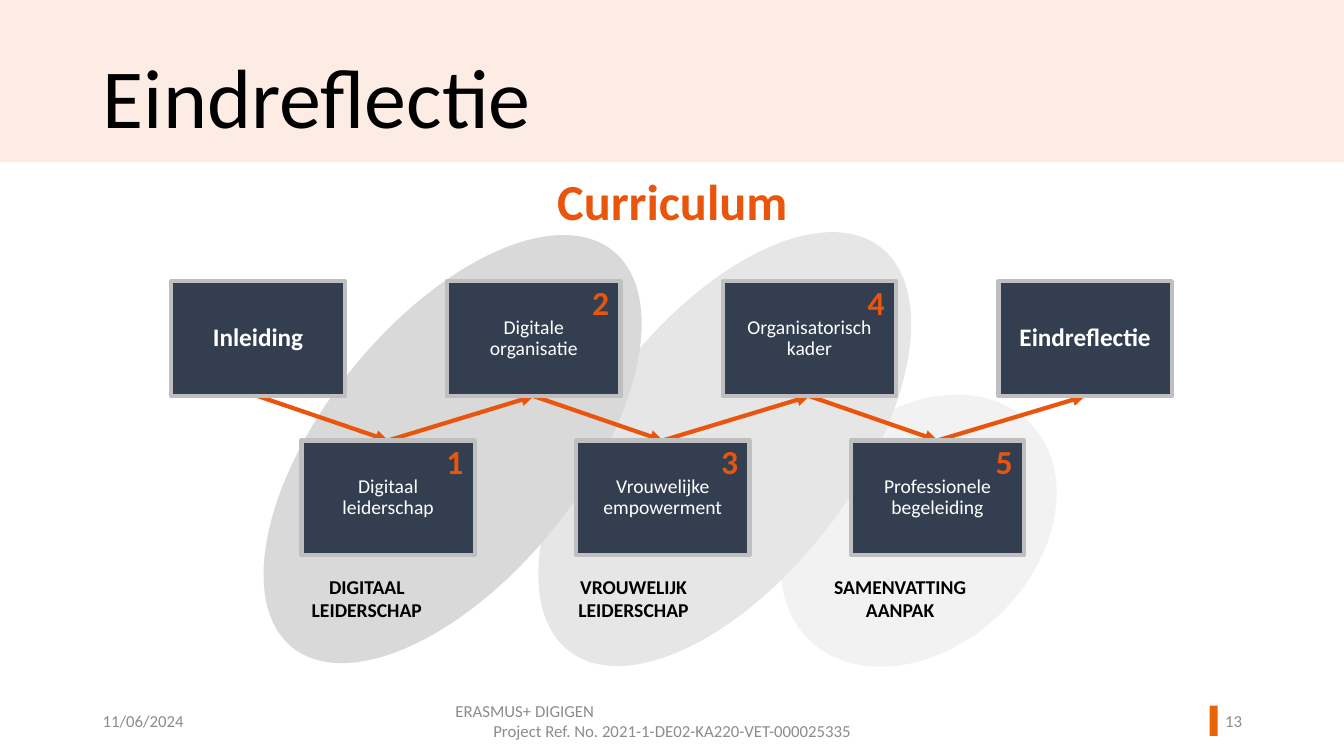
from dataclasses import dataclass

from lxml import etree
from pptx import Presentation
from pptx.dml.color import RGBColor
from pptx.enum.shapes import MSO_CONNECTOR, MSO_SHAPE
from pptx.enum.text import MSO_ANCHOR, PP_ALIGN
from pptx.oxml.ns import qn
from pptx.util import Inches, Pt

RECTANGLE, OVAL = MSO_SHAPE.RECTANGLE, MSO_SHAPE.OVAL
STRAIGHT = MSO_CONNECTOR.STRAIGHT
TOP, MIDDLE = MSO_ANCHOR.TOP, MSO_ANCHOR.MIDDLE
LEFT, CENTER, RIGHT = PP_ALIGN.LEFT, PP_ALIGN.CENTER, PP_ALIGN.RIGHT

CELL = 0.1  # grid cell in inches
COLUMNS, ROWS = 133.33, 75
CARD_WIDTH, CARD_HEIGHT = 17.2, 11.4
UPPER_ROW, LOWER_ROW = 27.9, 43.7


@dataclass(frozen=True)
class Theme:
    font: str = "Calibri"
    band: str = "FDECE3"
    marker: str = "E86507"
    accent: str = "E9550D"
    card: str = "333F50"
    card_border: str = "BFBFBF"
    ink: str = "000000"
    light: str = "FFFFFF"
    muted: str = "8C8C8C"
    title_size: int = 60
    heading_size: int = 36
    number_size: int = 24
    endpoint_size: int = 18
    body_size: int = 14
    footer_size: int = 12
    line_width: int = 3


THEME = Theme()


def grid(*cells):
    """Convert grid cells to slide lengths."""
    return [Inches(cell * CELL) for cell in cells]


def write(frame, text, *, size, color, bold=False, align=LEFT, anchor=TOP,
          spacing=None, margin=None):
    """Fill a text frame, one paragraph per line; align may list one value per line."""
    frame.word_wrap = True
    frame.vertical_anchor = anchor
    if margin is not None:
        frame.margin_left = frame.margin_right = Inches(margin)
        frame.margin_top = frame.margin_bottom = Inches(margin)
    lines = text.split("\n")
    aligns = align if isinstance(align, list) else [align] * len(lines)
    for index, (line, line_align) in enumerate(zip(lines, aligns)):
        para = frame.add_paragraph() if index else frame.paragraphs[0]
        para.alignment = line_align
        if spacing:
            para.line_spacing = spacing
        span = para.add_run()
        span.text = line
        span.font.name = THEME.font
        span.font.size = Pt(size)
        span.font.bold = bold
        span.font.color.rgb = RGBColor.from_string(color)


class Page:
    def __init__(self, deck, theme):
        self.theme = theme
        self.slide = deck.slides.add_slide(deck.slide_layouts[5])
        self.shapes = self.slide.shapes

    def title(self, text, *cells):
        box = self.shapes.title
        box.left, box.top, box.width, box.height = grid(*cells)
        write(box.text_frame, text, size=self.theme.title_size,
              color=self.theme.ink, spacing=0.9)

    def shape(self, kind, *cells, fill, border=None, rotation=0):
        shape = self.shapes.add_shape(kind, *grid(*cells))
        shape.shadow.inherit = False
        shape.rotation = rotation
        shape.fill.solid()
        shape.fill.fore_color.rgb = RGBColor.from_string(fill)
        if border:
            shape.line.color.rgb = RGBColor.from_string(border)
            shape.line.width = Pt(self.theme.line_width)
        else:
            shape.line.fill.background()
        return shape

    def band(self, height):
        """Draw the header band behind the title."""
        band = self.shape(RECTANGLE, 0, 0, COLUMNS, height, fill=self.theme.band)
        self.shapes.title._element.addprevious(band._element)

    def text(self, text, *cells, **style):
        box = self.shapes.add_textbox(*grid(*cells))
        write(box.text_frame, text, **style)

    def footer(self, text, left, width, align):
        self.text(text, left, 69.5, width, 4, size=self.theme.footer_size,
                  color=self.theme.muted, align=align, anchor=MIDDLE)

    def arrow(self, start, end):
        arrow = self.shapes.add_connector(STRAIGHT, *grid(*start, *end))
        arrow.line.color.rgb = RGBColor.from_string(self.theme.accent)
        arrow.line.width = Pt(self.theme.line_width)
        etree.SubElement(arrow.line._get_or_add_ln(), qn("a:tailEnd"), type="triangle")
        etree.SubElement(arrow._element.spPr, qn("a:effectLst"))

    def card(self, text, left, top, number=None):
        theme = self.theme
        card = self.shape(RECTANGLE, left, top, CARD_WIDTH, CARD_HEIGHT,
                          fill=theme.card, border=theme.card_border)
        size = theme.body_size if number else theme.endpoint_size
        write(card.text_frame, text, size=size, color=theme.light,
              bold=number is None, align=CENTER, anchor=MIDDLE,
              spacing=0.9, margin=0.16)
        if number:
            self.text(str(number), left + 13.4, top - 0.4, 3.7, 5, bold=True,
                      size=theme.number_size, color=theme.accent)


def draw_curriculum(page):
    theme = page.theme
    ellipses = [
        ((75.8, 41.1, 30.7, 23.1), 316.4, "F2F2F2"),
        ((46.6, 31.7, 50.6, 25.7), 307.6, "E7E6E6"),
        ((19.6, 31.8, 50.6, 25.5), 309, "D9D9D9"),
    ]
    for cells, rotation, fill in ellipses:
        page.shape(OVAL, *cells, fill=fill, rotation=rotation)

    modules = ["Inleiding", "Digitaal leiderschap", "Digitale organisatie",
               "Vrouwelijke empowerment", "Organisatorisch kader",
               "Professionele begeleiding", "Eindreflectie"]
    places, joints = [], []
    for index in range(len(modules)):
        step, is_lower = divmod(index, 2)
        left = 29.9 + 27.25 * step if is_lower else 17 + 27.35 * step
        top = LOWER_ROW if is_lower else UPPER_ROW
        places.append((left, top))
        joint_row = top if is_lower else top + CARD_HEIGHT
        joints.append((left + CARD_WIDTH / 2, joint_row))
    for start, end in zip(joints, joints[1:]):
        page.arrow(start, end)
    last = len(modules) - 1
    for index, (module, place) in enumerate(zip(modules, places)):
        page.card(module, *place, number=index if 0 < index < last else None)

    captions = ["DIGITAAL LEIDERSCHAP", "VROUWELIJK LEIDERSCHAP", "SAMENVATTING\nAANPAK"]
    for index, caption in enumerate(captions):
        page.text(caption, 27.8 + 26.45 * index, 56.5, CARD_WIDTH, 5.7, bold=True,
                  size=theme.body_size, color=theme.ink, align=CENTER)


def main():
    deck = Presentation()
    deck.slide_width, deck.slide_height = grid(COLUMNS, ROWS)
    page = Page(deck, THEME)
    page.title("Eindreflectie", 9.2, 5, 99.3, 8.5)
    page.band(16.1)
    page.shape(RECTANGLE, 120, 70, 0.8, 3, fill=THEME.marker)
    page.footer("13", 117.7, 6.5, RIGHT)
    page.footer("11/06/2024", 9.2, 30, LEFT)
    page.footer("ERASMUS+ DIGIGEN\nProject Ref. No. 2021-1-DE02-KA220-VET-000025335",
                44.2, 45, [LEFT, CENTER])
    page.text("Curriculum", 47.1, 16.4, 39.2, 7.1, size=THEME.heading_size,
              color=THEME.accent, bold=True, align=CENTER)
    draw_curriculum(page)
    deck.save("out.pptx")


if __name__ == "__main__":
    main()
